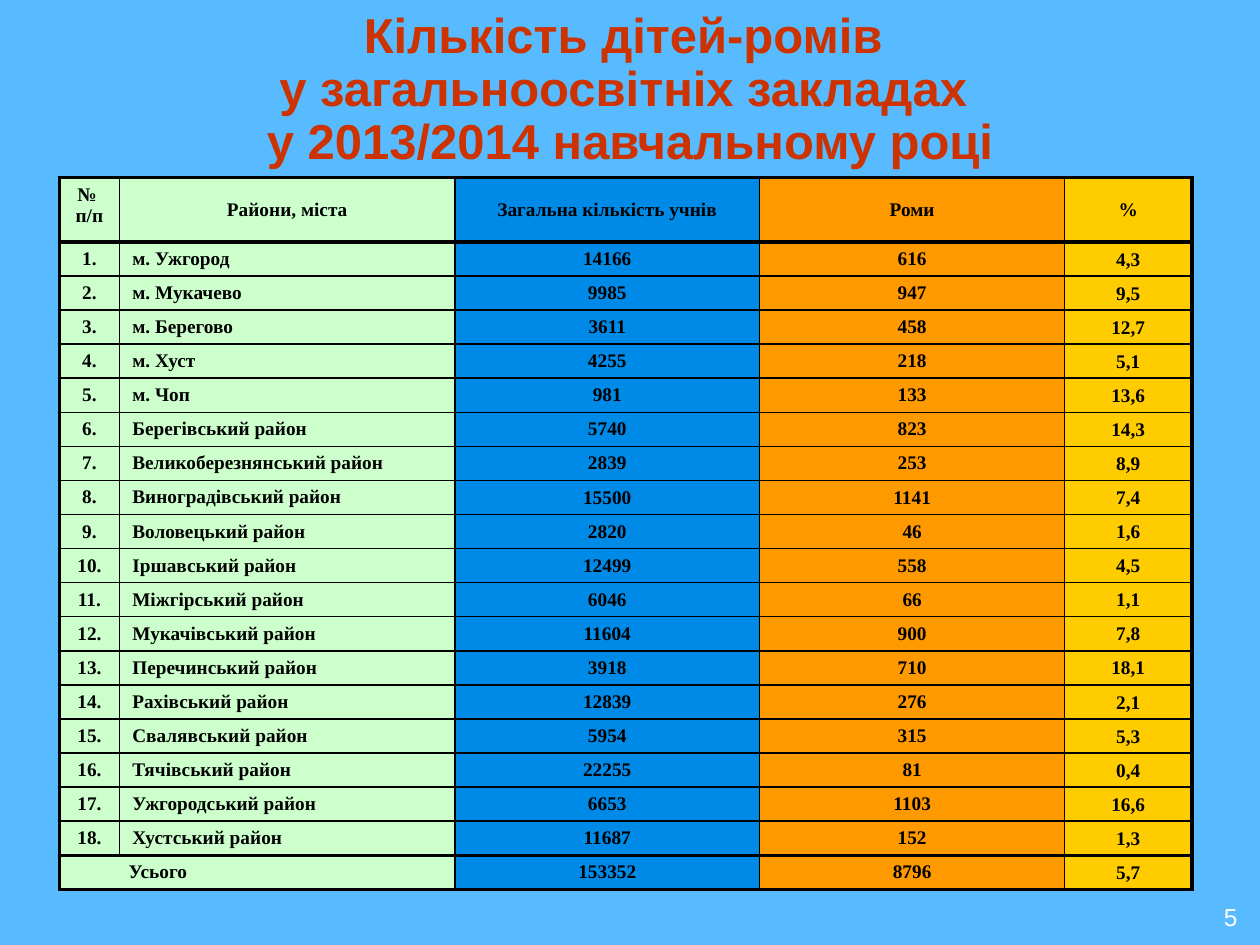
from dataclasses import dataclass

from lxml.etree import SubElement
from pptx import Presentation
from pptx.dml.color import RGBColor
from pptx.enum.text import MSO_ANCHOR, MSO_AUTO_SIZE, PP_ALIGN
from pptx.oxml.ns import qn
from pptx.util import Inches, Pt


@dataclass(frozen=True)
class Theme:
    background: str = "58BBFF"
    heading: str = "CC3300"
    ink: str = "000000"
    page: str = "FFFFFF"
    columns: tuple = ("CCFFCC", "CCFFCC", "008AE8", "FF9900", "FFCC00")
    sans: str = "Arial"
    serif: str = "Times New Roman"
    heading_size: float = 28
    table_size: float = 11
    page_size: float = 14
    thin: float = 1
    thick: float = 2.25


TITLE = ("Кількість дітей-ромів ", "у загальноосвітніх закладах ",
         "у 2013/2014 навчальному році")
HEADER = ("№ \nп/п", "Райони, міста", "Загальна кількість учнів", "Роми", "%")
DISTRICTS = (
    ("м. Ужгород", "14166", "616", "4,3"),
    ("м. Мукачево", "9985", "947", "9,5"),
    ("м. Берегово", "3611", "458", "12,7"),
    ("м. Хуст", "4255", "218", "5,1"),
    ("м. Чоп", "981", "133", "13,6"),
    ("Берегівський район", "5740", "823", "14,3"),
    ("Великоберезнянський район", "2839", "253", "8,9"),
    ("Виноградівський район", "15500", "1141", "7,4"),
    ("Воловецький район", "2820", "46", "1,6"),
    ("Іршавський район", "12499", "558", "4,5"),
    ("Міжгірський район", "6046", "66", "1,1"),
    ("Мукачівський район", "11604", "900", "7,8"),
    ("Перечинський район", "3918", "710", "18,1"),
    ("Рахівський район", "12839", "276", "2,1"),
    ("Свалявський район", "5954", "315", "5,3"),
    ("Тячівський район", "22255", "81", "0,4"),
    ("Ужгородський район", "6653", "1103", "16,6"),
    ("Хустський район", "11687", "152", "1,3"),
)
TOTAL = ("Усього", "", "153352", "8796", "5,7")
COLUMN_WIDTHS = (0.48, 2.66, 2.42, 2.42, 1.01)
HEADER_HEIGHT, ROW_HEIGHT = 0.51, 0.27
HANGING, TOTAL_INDENT = 0.38, 0.45
# Left, top, right and bottom margins of body cells, by column
BODY_MARGINS = {3: (0.07, 0, 0.07, 0), 4: (0.01, 0.01, 0.01, 0)}


class SlideBuilder:
    def __init__(self, slide, theme):
        self.slide = slide
        self.theme = theme
        slide.background.fill.solid()
        slide.background.fill.fore_color.rgb = RGBColor.from_string(theme.background)

    def add_run(self, paragraph, text, font, size, color, bold=False):
        run = paragraph.add_run()
        run.text = text
        run.font.name = font
        run.font.size = Pt(size)
        run.font.bold = bold
        run.font.color.rgb = RGBColor.from_string(color)

    def title(self, lines, left, top, width, height):
        heading = self.slide.shapes.title
        heading.left, heading.top = Inches(left), Inches(top)
        heading.width, heading.height = Inches(width), Inches(height)
        frame = heading.text_frame
        frame.auto_size = MSO_AUTO_SIZE.NONE
        frame.vertical_anchor = MSO_ANCHOR.MIDDLE
        paragraph = frame.paragraphs[0]
        paragraph.alignment = PP_ALIGN.CENTER
        paragraph.line_spacing = 0.9
        for index, line in enumerate(lines):
            if index:
                paragraph.add_line_break()
            self.add_run(paragraph, line, self.theme.sans, self.theme.heading_size,
                         self.theme.heading, bold=True)

    def page_number(self, number, left, top, width, height):
        box = self.slide.shapes.add_textbox(Inches(left), Inches(top),
                                            Inches(width), Inches(height))
        frame = box.text_frame
        frame.word_wrap = True
        frame.vertical_anchor = MSO_ANCHOR.BOTTOM
        paragraph = frame.paragraphs[0]
        paragraph.alignment = PP_ALIGN.RIGHT
        self.add_run(paragraph, number, self.theme.sans, self.theme.page_size,
                     self.theme.page)

    def borders(self, cell, thick_sides):
        properties = cell._tc.get_or_add_tcPr()
        for side in "LRTB":
            weight = self.theme.thick if side in thick_sides else self.theme.thin
            line = SubElement(properties, qn(f"a:ln{side}"), w=str(Pt(weight)))
            fill = SubElement(line, qn("a:solidFill"))
            SubElement(fill, qn("a:srgbClr"), val=self.theme.ink)

    def cell_text(self, cell, text, align, margin, indent):
        """Write one paragraph per line; margin and indent are in inches."""
        frame = cell.text_frame
        for index, line in enumerate(text.split("\n")):
            paragraph = frame.add_paragraph() if index else frame.paragraphs[0]
            paragraph.alignment = align
            properties = paragraph._p.get_or_add_pPr()
            properties.set("marL", str(Inches(margin)))
            properties.set("indent", str(Inches(indent)))
            self.add_run(paragraph, line, self.theme.serif, self.theme.table_size,
                         self.theme.ink, bold=True)

    def table(self, rows, left, top):
        last_row, last_column = len(rows) - 1, len(COLUMN_WIDTHS) - 1
        heights = [HEADER_HEIGHT] + [ROW_HEIGHT] * last_row
        table = self.slide.shapes.add_table(
            len(rows), len(COLUMN_WIDTHS), Inches(left), Inches(top),
            Inches(sum(COLUMN_WIDTHS)), Inches(sum(heights))).table
        table.first_row = table.horz_banding = False
        for column, width in zip(table.columns, COLUMN_WIDTHS):
            column.width = Inches(width)
        for row, height in zip(table.rows, heights):
            row.height = Inches(height)
        table.cell(last_row, 0).merge(table.cell(last_row, 1))

        for r, values in enumerate(rows):
            for c, text in enumerate(values):
                cell = table.cell(r, c)
                thick = {"L": c == 0, "R": c == last_column,
                         "T": r in (0, 1, last_row),
                         "B": r in (0, last_row - 1, last_row)}
                self.borders(cell, [side for side, is_thick in thick.items() if is_thick])
                cell.fill.solid()
                cell.fill.fore_color.rgb = RGBColor.from_string(self.theme.columns[c])
                if cell.is_spanned:
                    continue
                is_top = c == 0 or (c == 1 and r > 0)
                cell.vertical_anchor = MSO_ANCHOR.TOP if is_top else MSO_ANCHOR.MIDDLE
                margin, indent = HANGING, -HANGING
                if r > 0 and c in BODY_MARGINS:
                    margin = indent = 0
                    (cell.margin_left, cell.margin_top, cell.margin_right,
                     cell.margin_bottom) = map(Inches, BODY_MARGINS[c])
                is_total_label = r == last_row and c == 0
                if is_total_label:
                    margin, indent = TOTAL_INDENT, 0
                is_left = is_total_label or (c == 1 and r > 0)
                align = PP_ALIGN.LEFT if is_left else PP_ALIGN.CENTER
                self.cell_text(cell, text, align, margin, indent)


def main():
    presentation = Presentation()
    presentation.slide_width, presentation.slide_height = Inches(10), Inches(7.5)
    title_only = presentation.slide_layouts[5]
    builder = SlideBuilder(presentation.slides.add_slide(title_only), Theme())
    numbered = [(f"{number}.", *district)
                for number, district in enumerate(DISTRICTS, start=1)]
    builder.title(TITLE, 0.5, 0.09, 9, 1.26)
    builder.table([HEADER, *numbered, TOTAL], 0.47, 1.41)
    builder.page_number("5", 9.56, 7.12, 0.36, 0.32)
    presentation.save("out.pptx")


if __name__ == "__main__":
    main()
